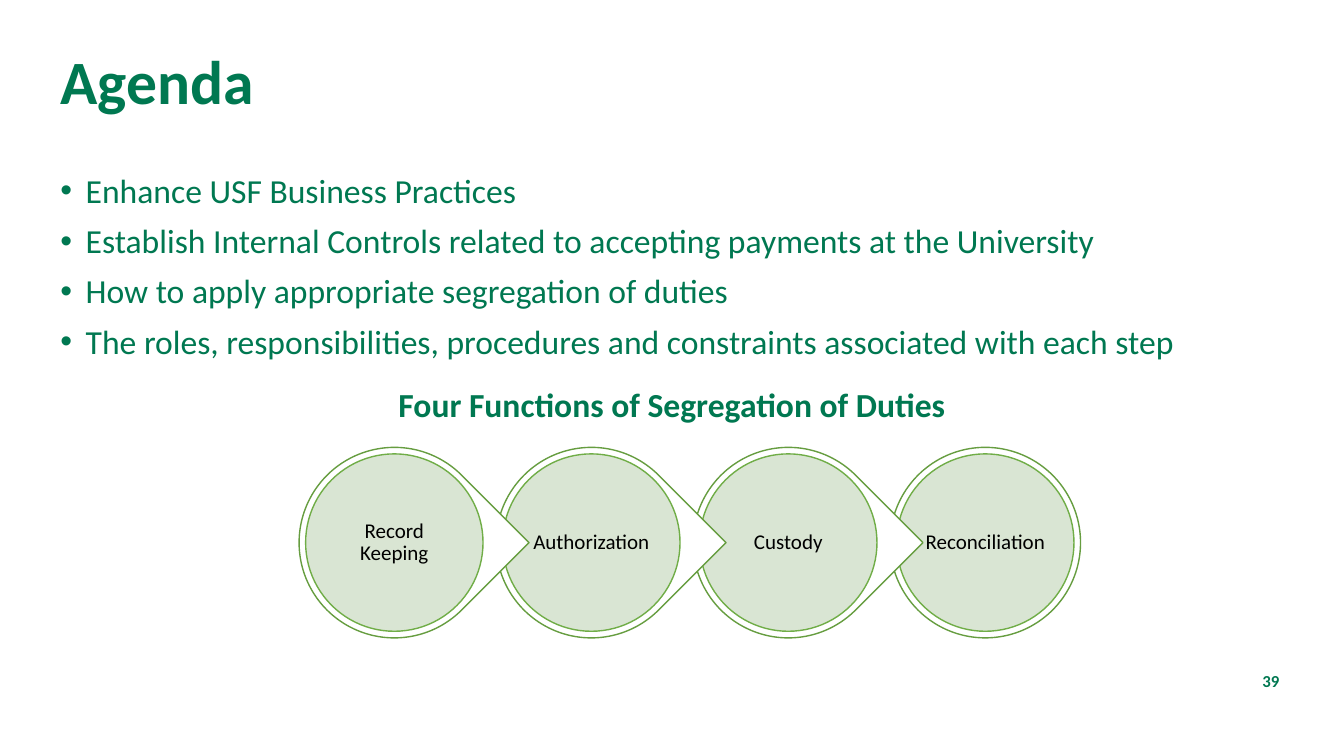
import pptx
import pptx.util
import pptx.dml.color
import pptx.enum.shapes
import pptx.enum.text
import pptx.oxml.ns
from dataclasses import dataclass
from lxml import etree

SHAPE = pptx.enum.shapes.MSO_SHAPE
ALIGN = pptx.enum.text.PP_ALIGN
ANCHOR = pptx.enum.text.MSO_ANCHOR

WIDTH, HEIGHT = pptx.util.Inches(13.333), pptx.util.Inches(7.5)
COLS, ROWS = 160, 90


@dataclass(frozen=True)
class Theme:
    font: str = "Calibri"
    green: str = "007851"
    ring_fill: str = "FFFFFF"
    ring_line: str = "669D40"
    disc_fill: str = "D5E3CF"
    disc_line: str = "70AD47"
    label: str = "000000"
    title_size: int = 44
    body_size: int = 24
    label_size: int = 15
    number_size: int = 12
    disc_alpha: int = 90


THEME = Theme()
BULLETS = [
    "Enhance USF Business Practices",
    "Establish Internal Controls related to accepting payments at the University",
    "How to apply appropriate segregation of duties",
    "The roles, responsibilities, procedures and constraints associated with each step",
]
FUNCTIONS = ["Record Keeping", "Authorization", "Custody", "Reconciliation"]
CHAIN = {"x": 46.95, "y": 64.6, "step": 23.45, "ring": 22.68, "disc": 21.12}


def grid(col, row, cols, rows):
    """Turn grid columns and rows into left, top, width and height."""
    return (round(WIDTH * col / COLS), round(HEIGHT * row / ROWS),
            round(WIDTH * cols / COLS), round(HEIGHT * rows / ROWS))


def rgb(color):
    return pptx.dml.color.RGBColor.from_string(color)


def set_attrs(obj, values):
    for name, value in values.items():
        setattr(obj, name, value)


def place(s, cell):
    set_attrs(s, dict(zip(("left", "top", "width", "height"), grid(*cell))))


def add_bullet(p):
    pPr = p._p.get_or_add_pPr()
    indent = pptx.util.Inches(0.25)
    pPr.set("marL", str(indent))
    pPr.set("indent", str(-indent))
    etree.SubElement(pPr, pptx.oxml.ns.qn("a:buChar")).set("char", "•")


def write(s, lines, size, color=THEME.green, bold=False, align=ALIGN.LEFT,
          anchor=ANCHOR.TOP, spacing=0.9, bullets=False):
    tf = s.text_frame
    set_attrs(tf, {"word_wrap": True, "vertical_anchor": anchor,
                   "auto_size": pptx.enum.text.MSO_AUTO_SIZE.NONE})
    for i, line in enumerate(lines):
        p = tf.add_paragraph() if i else tf.paragraphs[0]
        if bullets:
            add_bullet(p)
        set_attrs(p, {"alignment": align, "line_spacing": spacing,
                      "space_before": pptx.util.Pt(10 if i else 0)})
        r = p.add_run()
        r.text = line
        set_attrs(r.font, {"name": THEME.font, "size": pptx.util.Pt(size),
                           "bold": bold})
        r.font.color.rgb = rgb(color)


def add_text(slide, cell, text, size, **style):
    write(slide.shapes.add_textbox(*grid(*cell)), [text], size, **style)


def add_round(shapes, kind, x, y, size, fill, line):
    """Draw a round shape centred on a grid point."""
    s = shapes.add_shape(kind, *grid(x - size / 2, y - size / 2, size, size))
    s.shadow.inherit = False
    s.fill.solid()
    s.fill.fore_color.rgb = rgb(fill)
    s.line.color.rgb = rgb(line)
    s.line.width = pptx.util.Pt(1)
    return s


def set_alpha(s, percent):
    color = s.fill._xPr.find(".//" + pptx.oxml.ns.qn("a:srgbClr"))
    etree.SubElement(color, pptx.oxml.ns.qn("a:alpha")).set("val", str(percent * 1000))


def add_chain(slide, labels):
    """Draw the steps from right to left, so each pointer overlaps the next."""
    shapes = slide.shapes.add_group_shape().shapes
    last = len(labels) - 1
    for i in range(last, -1, -1):
        center = CHAIN["x"] + i * CHAIN["step"], CHAIN["y"]
        kind = SHAPE.OVAL if i == last else SHAPE.TEAR
        ring = add_round(shapes, kind, *center, CHAIN["ring"],
                         THEME.ring_fill, THEME.ring_line)
        if i < last:
            ring.rotation = 45
        disc = add_round(shapes, SHAPE.OVAL, *center, CHAIN["disc"],
                         THEME.disc_fill, THEME.disc_line)
        set_alpha(disc, THEME.disc_alpha)
        set_attrs(disc.text_frame, dict.fromkeys(
            ("margin_left", "margin_top", "margin_right", "margin_bottom"), 0))
        write(disc, [labels[i]], THEME.label_size, color=THEME.label,
              align=ALIGN.CENTER, anchor=ANCHOR.MIDDLE)


def main():
    prs = pptx.Presentation()
    prs.slide_width, prs.slide_height = WIDTH, HEIGHT
    slide = prs.slides.add_slide(prs.slide_layouts[1])
    title, body = slide.shapes.title, slide.placeholders[1]
    place(title, (6, 5.5, 147.5, 10.2))
    write(title, ["Agenda"], THEME.title_size, bold=True)
    place(body, (6, 20.15, 144, 23.3))
    write(body, BULLETS, THEME.body_size, bullets=True)
    add_text(slide, (142.3, 79.3, 11.2, 3.5), "39", THEME.number_size, bold=True,
             align=ALIGN.RIGHT, anchor=ANCHOR.MIDDLE, spacing=1.0)
    add_text(slide, (43.8, 45.7, 72.4, 6.6), "Four Functions of Segregation of Duties",
             THEME.body_size, bold=True, align=ALIGN.CENTER)
    add_chain(slide, FUNCTIONS)
    prs.save("out.pptx")


if __name__ == "__main__":
    main()
